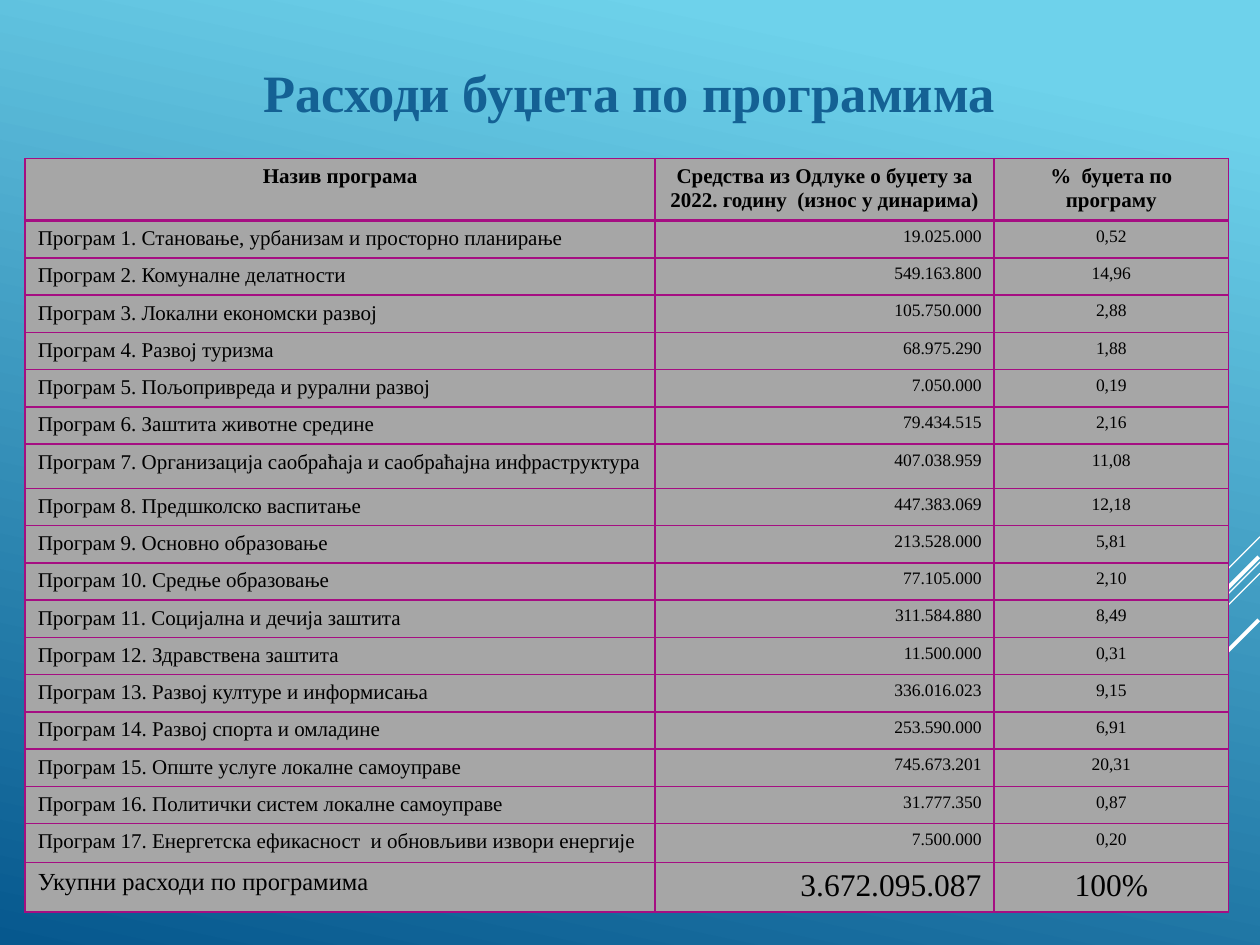
from typing import NamedTuple

from lxml import etree
from pptx import Presentation
from pptx.dml.color import RGBColor
from pptx.enum.shapes import MSO_CONNECTOR
from pptx.enum.text import MSO_ANCHOR, PP_ALIGN
from pptx.oxml.ns import qn
from pptx.util import Inches, Pt

LEFT, CENTER, RIGHT = PP_ALIGN.LEFT, PP_ALIGN.CENTER, PP_ALIGN.RIGHT
MIDDLE = MSO_ANCHOR.MIDDLE
STRAIGHT = MSO_CONNECTOR.STRAIGHT

FONT = "Times New Roman"
BLACK, WHITE, GREY = "000000", "FFFFFF", "A6A6A6"
BORDER, TITLE_BLUE = "A50E82", "146194"
SKY, DEEP_BLUE = "6ED2EB", "06588E"


class Stroke(NamedTuple):
    """Diagonal accent line: start and end in inches, width in points."""
    start: tuple[float, float]
    end: tuple[float, float]
    width: float


class Program(NamedTuple):
    name: str
    amount: str
    share: str


class RowStyle(NamedTuple):
    """Text sizes and height in points, alignments by column."""
    sizes: tuple[int, int, int]
    aligns: tuple
    height: float
    bold: bool = False


STROKES = [
    Stroke((10, 4.26), (9.17, 5.09), 0.75),
    Stroke((10, 4.46), (7.3, 7.17), 0.75),
    Stroke((10, 4.55), (8.28, 6.27), 0.75),
    Stroke((9.99, 4.42), (8.42, 5.99), 2.25),
    Stroke((9.99, 4.92), (8.85, 6.06), 2.25),
]

HEADER = Program("Назив програма",
                 "Средства из Одлуке о буџету за 2022. годину  (износ у динарима)",
                 "%  буџета по програму")
PROGRAMS = [
    Program("Становање, урбанизам и просторно планирање", "19.025.000", "0,52"),
    Program("Комуналне делатности", "549.163.800", "14,96"),
    Program("Локални економски развој", "105.750.000", "2,88"),
    Program("Развој туризма", "68.975.290", "1,88"),
    Program("Пољопривреда и рурални развој", "7.050.000", "0,19"),
    Program("Заштита животне средине", "79.434.515", "2,16"),
    Program("Организација саобраћаја и саобраћајна инфраструктура", "407.038.959", "11,08"),
    Program("Предшколско васпитање", "447.383.069", "12,18"),
    Program("Основно образовање", "213.528.000", "5,81"),
    Program("Средње образовање", "77.105.000", "2,10"),
    Program("Социјална и дечија заштита", "311.584.880", "8,49"),
    Program("Здравствена заштита", "11.500.000", "0,31"),
    Program("Развој културе и информисања", "336.016.023", "9,15"),
    Program("Развој спорта и омладине", "253.590.000", "6,91"),
    Program("Опште услуге локалне самоуправе", "745.673.201", "20,31"),
    Program("Политички систем локалне самоуправе", "31.777.350", "0,87"),
    Program("Енергетска ефикасност  и обновљиви извори енергије", "7.500.000", "0,20"),
]
TOTAL = Program("Укупни расходи по програмима", "3.672.095.087", "100%")

COLUMNS = (5, 2.69, 1.86)
BODY_ALIGNS = (LEFT, RIGHT, CENTER)
HEADER_STYLE = RowStyle((12, 12, 12), (CENTER,) * 3, 35.4, True)
BODY_STYLE = RowStyle((12, 10, 10), BODY_ALIGNS, 21.3)
TOTAL_STYLE = RowStyle((14, 18, 18), BODY_ALIGNS, 28.3)
TALLER_ROWS = {7: 25.2, 17: 22.3}


def color(value: str) -> RGBColor:
    return RGBColor.from_string(value)


def add_text(frame, text: str, size: float, align, bold: bool, tint: str) -> None:
    para = frame.paragraphs[0]
    para.alignment = align
    span = para.add_run()
    span.text = text
    span.font.name = FONT
    span.font.size = Pt(size)
    span.font.bold = bold
    span.font.color.rgb = color(tint)


def paint_background(page) -> None:
    fill = page.background.fill
    fill.gradient()
    fill.gradient_angle = 360 - 102
    for stop, position, tint in zip(fill.gradient_stops, (0.1, 1), (SKY, DEEP_BLUE)):
        stop.position = position
        stop.color.rgb = color(tint)


def draw_stroke(page, stroke: Stroke) -> None:
    ends = [Inches(value) for value in stroke.start + stroke.end]
    line = page.shapes.add_connector(STRAIGHT, *ends)
    line.line.color.rgb = color(WHITE)
    line.line.width = Pt(stroke.width)
    etree.SubElement(line._element.spPr, qn("a:effectLst"))


def set_borders(cell, top: float, bottom: float) -> None:
    properties = cell._tc.get_or_add_tcPr()
    for side, width in (("L", 1), ("R", 1), ("T", top), ("B", bottom)):
        edge = etree.SubElement(properties, qn(f"a:ln{side}"), w=str(Pt(width)))
        fill = etree.SubElement(edge, qn("a:solidFill"))
        etree.SubElement(fill, qn("a:srgbClr"), val=BORDER)


def fill_row(table, index: int, program: Program, style: RowStyle) -> None:
    table.rows[index].height = Pt(TALLER_ROWS.get(index, style.height))
    for column, text in enumerate(program):
        cell = table.cell(index, column)
        # The rule under the header is twice as thick as the others
        set_borders(cell, 2 if index == 1 else 1, 2 if index == 0 else 1)
        cell.fill.solid()
        cell.fill.fore_color.rgb = color(GREY)
        add_text(cell.text_frame, text, style.sizes[column],
                 style.aligns[column], style.bold, BLACK)


def draw_table(page) -> None:
    rows = [(HEADER, HEADER_STYLE)]
    for number, program in enumerate(PROGRAMS, 1):
        name = f"Програм {number}. {program.name}"
        rows.append((program._replace(name=name), BODY_STYLE))
    rows.append((TOTAL, TOTAL_STYLE))

    table = page.shapes.add_table(len(rows), len(COLUMNS), Inches(0.2), Inches(1.26),
                                  Inches(sum(COLUMNS)), Inches(6)).table
    table.horz_banding = False
    for column, width in zip(table.columns, COLUMNS):
        column.width = Inches(width)
    for index, (program, style) in enumerate(rows):
        fill_row(table, index, program, style)


def draw_title(page) -> None:
    box = page.shapes.add_textbox(Inches(0.83), Inches(0.42), Inches(8.33), Inches(0.61))
    frame = box.text_frame
    frame.word_wrap = True
    frame.vertical_anchor = MIDDLE
    add_text(frame, "Расходи буџета по програмима", 30, CENTER, True, TITLE_BLUE)


def main() -> None:
    deck = Presentation()
    deck.slide_width, deck.slide_height = Inches(10), Inches(7.5)
    page = deck.slides.add_slide(deck.slide_layouts[6])

    # Backdrop
    paint_background(page)
    for stroke in STROKES:
        draw_stroke(page, stroke)

    # Content
    draw_table(page)
    draw_title(page)
    deck.save("out.pptx")


if __name__ == "__main__":
    main()
